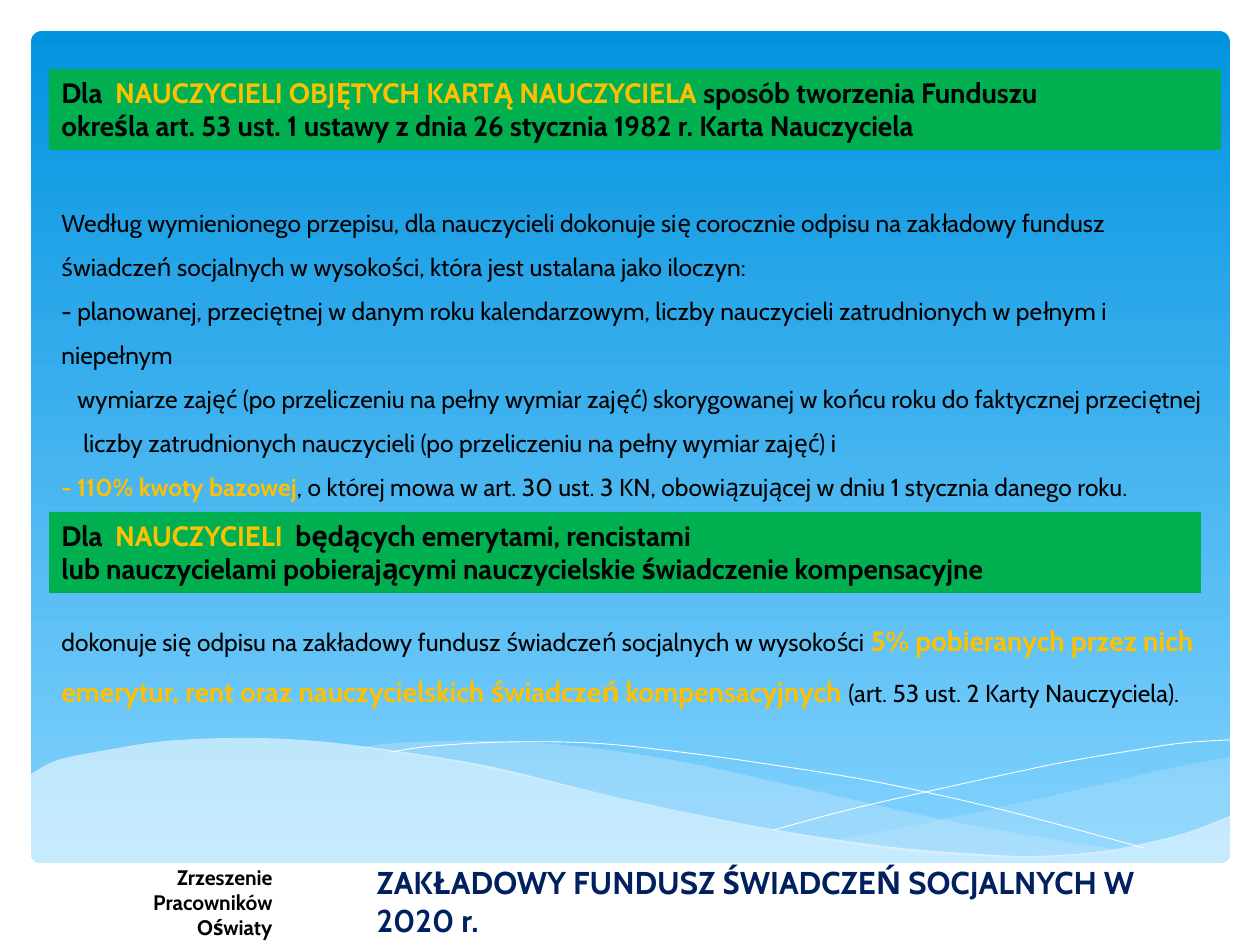
"""Build the slide on how the social benefits fund for teachers is created."""
from lxml import etree
from pptx import Presentation
from pptx.dml.color import RGBColor
from pptx.enum.shapes import MSO_SHAPE
from pptx.enum.text import MSO_ANCHOR, MSO_AUTO_SIZE, PP_ALIGN
from pptx.oxml.ns import qn
from pptx.util import Emu, Pt

RECT, ROUNDED = MSO_SHAPE.RECTANGLE, MSO_SHAPE.ROUNDED_RECTANGLE
LEFT, RIGHT = PP_ALIGN.LEFT, PP_ALIGN.RIGHT
TOP, NO_FIT = MSO_ANCHOR.TOP, MSO_AUTO_SIZE.NONE

BLACK = RGBColor(0x00, 0x00, 0x00)
WHITE = RGBColor(0xFF, 0xFF, 0xFF)
GOLD = RGBColor(0xFF, 0xC0, 0x00)
GREEN = RGBColor(0x00, 0xB0, 0x50)
NAVY = RGBColor(0x00, 0x20, 0x60)
SKY_TOP = RGBColor(0x02, 0x93, 0xE0)
SKY_BOTTOM = RGBColor(0x83, 0xD3, 0xFE)
MIST = RGBColor(0xC6, 0xE7, 0xFC)

FONT = "Cabin"
SCALE = 914400 / 126
STEPS = 6

PLAIN = (14, BLACK, False)
ACCENT = (14, GOLD, True)
STRONG = (16, GOLD, True)
HEAD = (16, BLACK, True)
TITLE = (18, NAVY, True)
UNION = (12, BLACK, True)

PANEL = (31, 31, 1199, 832)

WAVES = [
    ([[(1230, 757), (1162, 770), (1086, 788), (983, 811), (891, 830), (834, 840)],
      [(834, 840), (924, 852), (1013, 857), (1089, 853), (1152, 843), (1198, 830),
       (1230, 818)]], MIST, 29),
    ([[(362, 747), (457, 762), (567, 786), (714, 819), (820, 839), (911, 852),
       (1004, 857), (1070, 856), (1126, 851)],
      [(1126, 851), (1056, 840), (935, 818), (794, 786), (699, 765), (616, 751),
       (529, 742), (456, 741), (396, 743), (362, 747)]], MIST, 40),
    ([[(391, 752), (433, 746), (507, 742), (591, 743), (672, 751), (767, 764),
       (877, 782), (1003, 810), (1144, 848)]], None, None),
    ([[(774, 830), (848, 810), (944, 788), (1055, 764), (1130, 751), (1183, 743),
       (1230, 740)]], None, None),
    ([[(31, 774), (58, 760), (107, 750), (166, 741), (243, 738), (315, 741),
       (397, 751), (493, 767), (599, 793), (699, 815), (789, 832), (892, 847),
       (980, 854), (1037, 856), (1103, 851), (1159, 840), (1197, 829), (1230, 816)],
      [(1230, 863), (31, 863)]], WHITE, 55),
]

BANNERS = [
    ((49, 69, 1172, 81), [
        (0, [("Dla  ", HEAD), ("NAUCZYCIELI OBJĘTYCH KARTĄ NAUCZYCIELA ", STRONG),
             ("sposób tworzenia Funduszu", HEAD)]),
        (0, [("określa art. 53 ust. 1 ustawy z dnia 26 stycznia 1982 r. Karta Nauczyciela",
              HEAD)])]),
    ((49, 512, 1152, 81), [
        (0, [("Dla  ", HEAD), ("NAUCZYCIELI", STRONG),
             ("  będących emerytami, rencistami", HEAD)]),
        (0, [("lub nauczycielami pobierającymi nauczycielskie świadczenie kompensacyjne",
              HEAD)])]),
]

TEXTS = [
    ((49, 187, 1182, 326), LEFT, 1.5, [
        (0, [("Według wymienionego przepisu, dla nauczycieli dokonuje się corocznie odpisu "
              "na zakładowy fundusz świadczeń socjalnych w wysokości, która jest ustalana "
              "jako iloczyn:", PLAIN)]),
        (0, [("- planowanej, przeciętnej w danym roku kalendarzowym, liczby nauczycieli "
              "zatrudnionych w pełnym i niepełnym", PLAIN)]),
        (16, [("wymiarze zajęć (po przeliczeniu na pełny wymiar zajęć) skorygowanej "
               "w końcu roku do faktycznej przeciętnej", PLAIN)]),
        (22, [("liczby zatrudnionych nauczycieli (po przeliczeniu na pełny wymiar zajęć) i",
               PLAIN)]),
        (0, [("- 110% kwoty bazowej", ACCENT),
             (", o której mowa w art. 30 ust. 3 KN, obowiązującej w dniu 1 stycznia "
              "danego roku.", PLAIN)])]),
    ((49, 601, 1191, 115), LEFT, 1.5, [
        (0, [("dokonuje się odpisu na zakładowy fundusz świadczeń socjalnych "
              "w wysokości ", PLAIN),
             ("5% pobieranych przez nich emerytur, rent oraz nauczycielskich świadczeń "
              "kompensacyjnych ", STRONG),
             ("(art. 53 ust. 2 Karty Nauczyciela).", PLAIN)])]),
    ((29, 858, 256, 89), RIGHT, None, [
        (0, [(line, UNION)]) for line in ("Zrzeszenie", "Pracowników", "Oświaty")]),
]

HEADING_BOX = (364, 857, 867, 88)
HEADING = [(0, [("ZAKŁADOWY FUNDUSZ ŚWIADCZEŃ SOCJALNYCH W 2020 r.", TITLE)])]


def px(n):
    return Emu(round(n * SCALE))


def box(values):
    return [px(v) for v in values]


def write(sp, paragraphs, align=LEFT, spacing=None):
    tf = sp.text_frame
    tf.word_wrap, tf.auto_size, tf.vertical_anchor = True, NO_FIT, TOP
    for i, (indent, runs) in enumerate(paragraphs):
        p = tf.paragraphs[0] if i == 0 else tf.add_paragraph()
        p.alignment = align
        if spacing:
            p.line_spacing = spacing
        if indent:
            p._p.get_or_add_pPr().set("marL", str(px(indent)))
        for text, (size, color, bold) in runs:
            r = p.add_run()
            r.text = text
            r.font.name, r.font.size, r.font.bold = FONT, Pt(size), bold
            r.font.color.rgb = color


def smooth(points):
    if len(points) < 3:
        return points
    padded = [points[0], *points, points[-1]]
    curve = [points[0]]
    for a, b, c, d in zip(padded, padded[1:], padded[2:], padded[3:]):
        for k in range(1, STEPS + 1):
            t = k / STEPS
            curve.append(tuple(
                (2 * q + (r - p) * t + (2 * p - 5 * q + 4 * r - s) * t ** 2
                 + (3 * q - p - 3 * r + s) * t ** 3) / 2
                for p, q, r, s in zip(a, b, c, d)))
    return curve


def add_wave(shapes, curves, color, opacity):
    points = [(px(x), px(y)) for curve in curves for x, y in smooth(curve)]
    builder = shapes.build_freeform(*points[0], scale=1.0)
    builder.add_line_segments(points[1:], close=color is not None)
    sp = builder.convert_to_shape()
    sp.shadow.inherit = False
    if color is None:
        sp.fill.background()
        sp.line.color.rgb = WHITE
        sp.line.width = Pt(0.5)
        return
    sp.fill.solid()
    sp.fill.fore_color.rgb = color
    sp.line.fill.background()
    clr = sp._element.spPr.find(qn("a:solidFill"))[0]
    etree.SubElement(clr, qn("a:alpha")).set("val", str(opacity * 1000))


def add_plain(shapes, kind, place):
    sp = shapes.add_shape(kind, *box(place))
    sp.shadow.inherit = False
    sp.line.fill.background()
    return sp


def main():
    prs = Presentation()
    prs.slide_width, prs.slide_height = px(1260), px(945)
    s = prs.slides.add_slide(prs.slide_layouts[5])

    panel = add_plain(s.shapes, ROUNDED, PANEL)
    panel.adjustments[0] = 0.013
    panel.fill.gradient()
    panel.fill.gradient_angle = 270
    for stop, color in zip(panel.fill.gradient_stops, (SKY_TOP, SKY_BOTTOM)):
        stop.color.rgb = color

    for wave in WAVES:
        add_wave(s.shapes, *wave)

    for place, paragraphs in BANNERS:
        sp = add_plain(s.shapes, RECT, place)
        sp.fill.solid()
        sp.fill.fore_color.rgb = GREEN
        write(sp, paragraphs)

    for place, align, spacing, paragraphs in TEXTS:
        write(s.shapes.add_textbox(*box(place)), paragraphs, align, spacing)

    title = s.shapes.title
    title.left, title.top, title.width, title.height = box(HEADING_BOX)
    write(title, HEADING)

    prs.save("out.pptx")


if __name__ == "__main__":
    main()
